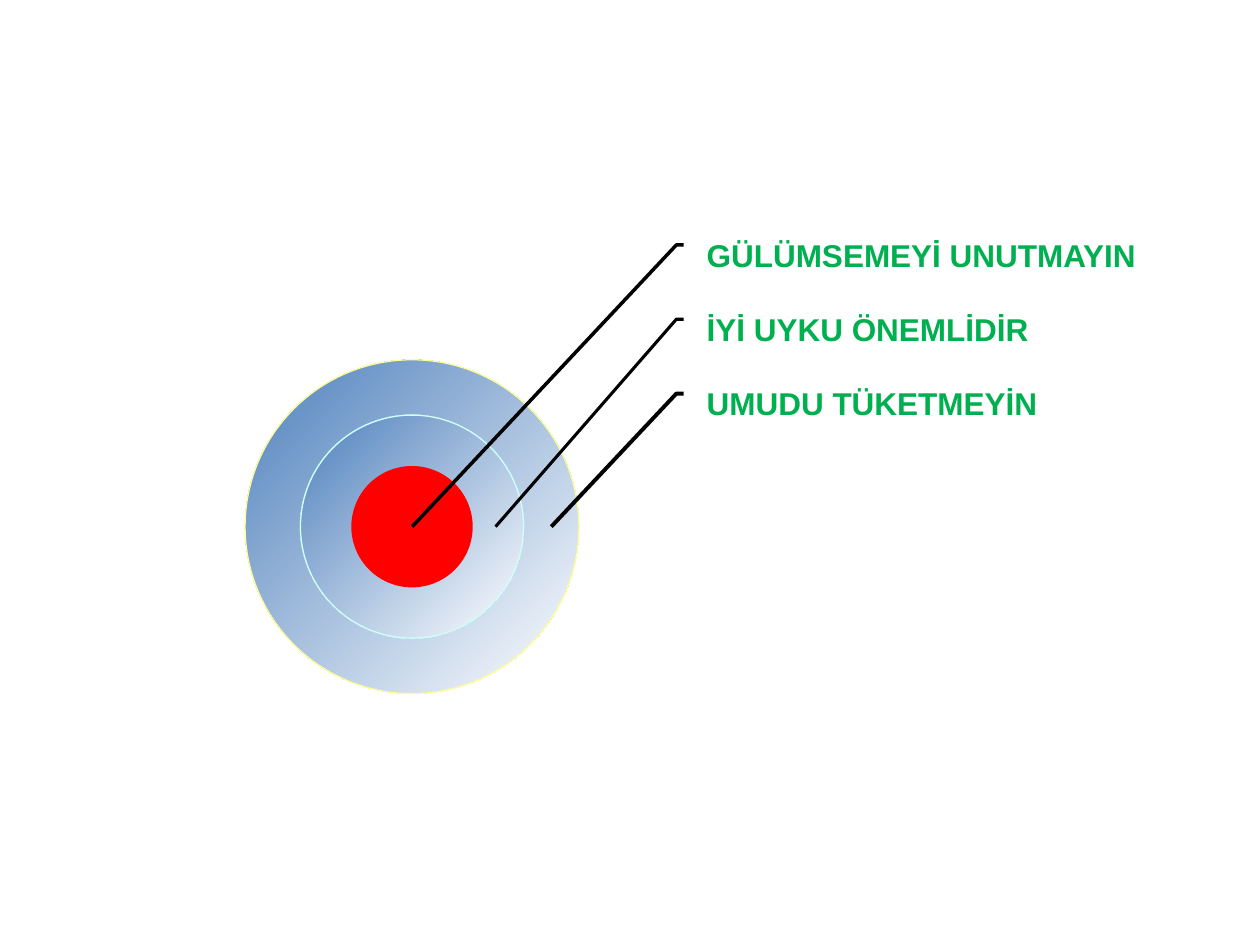
from dataclasses import dataclass

from pptx import Presentation
from pptx.dml.color import RGBColor
from pptx.enum import shapes, text
from pptx.util import Inches, Pt

CENTER_X, CENTER_Y = 3.27, 4.18
LABEL_LEFT, LABEL_WIDTH, LABEL_HEIGHT = 5.51, 0.71, 0.59
LOWEST_LABEL_TOP = 3
FONT_FORMAT = {"name": "Arial", "size": Pt(18), "bold": True}
FRAME_FORMAT = {"word_wrap": False, "vertical_anchor": text.MSO_ANCHOR.TOP}


@dataclass
class Ring:
    advice: str
    outer: float
    inner: float
    edge: str
    edge_width: float
    leader_width: float


RINGS = [
    Ring("UMUDU TÜKETMEYİN", 1.325, 0.885, "FFFF99", 0.75, 2.25),
    Ring("İYİ UYKU ÖNEMLİDİR", 0.885, 0.44, "CCFFFF", 0.75, 1.75),
    Ring("GÜLÜMSEMEYİ UNUTMAYIN", 0.44, 0, "FF0000", 6, 2),
]


def color(value: str) -> RGBColor:
    return RGBColor.from_string(value)


def apply(target, values: dict) -> None:
    for name, value in values.items():
        setattr(target, name, value)


def set_line(shape, value: str, width: float) -> None:
    shape.shadow.inherit = False
    shape.line.color.rgb = color(value)
    shape.line.width = Pt(width)


def draw_ring(target, ring: Ring) -> None:
    kind = shapes.MSO_SHAPE.DONUT if ring.inner else shapes.MSO_SHAPE.OVAL
    diameter = Inches(2 * ring.outer)
    band = target.shapes.add_shape(
        kind, Inches(CENTER_X - ring.outer), Inches(CENTER_Y - ring.outer),
        diameter, diameter)
    set_line(band, ring.edge, ring.edge_width)
    if not ring.inner:
        band.fill.solid()
        band.fill.fore_color.rgb = color("FF0000")
        return
    band.adjustments[0] = (ring.outer - ring.inner) / (2 * ring.outer)
    band.fill.gradient()
    band.fill.gradient_angle = 315
    for stop, value, position in zip(
            band.fill.gradient_stops, ("4F81BD", "FFFFFF"), (0, 1)):
        stop.color.rgb = color(value)
        stop.position = position


def draw_callout(target, ring: Ring, top: float) -> None:
    callout = target.shapes.add_shape(
        shapes.MSO_SHAPE.LINE_CALLOUT_2_NO_BORDER, Inches(LABEL_LEFT),
        Inches(top), Inches(LABEL_WIDTH), Inches(LABEL_HEIGHT))
    callout.fill.background()
    set_line(callout, "000000", ring.leader_width)
    tip_x = CENTER_X + ((ring.outer + ring.inner) / 2 if ring.inner else 0)
    bends = (0.21, -0.12, 0.21, -0.2,
             (CENTER_Y - top) / LABEL_HEIGHT,
             (tip_x - LABEL_LEFT) / LABEL_WIDTH)
    for index, bend in enumerate(bends):
        callout.adjustments[index] = bend
    apply(callout.text_frame, FRAME_FORMAT)
    paragraph = callout.text_frame.paragraphs[0]
    paragraph.alignment = text.PP_ALIGN.LEFT
    advice = paragraph.add_run()
    advice.text = ring.advice
    apply(advice.font, FONT_FORMAT)
    advice.font.color.rgb = color("00B050")


def main() -> None:
    deck = Presentation()
    deck.slide_width, deck.slide_height = Inches(10), Inches(7.5)
    slide = deck.slides.add_slide(deck.slide_layouts[6])
    target = slide.shapes.add_group_shape()
    for level, ring in enumerate(RINGS):
        draw_ring(target, ring)
        draw_callout(target, ring, LOWEST_LABEL_TOP - level * LABEL_HEIGHT)
    deck.save("out.pptx")


if __name__ == "__main__":
    main()
